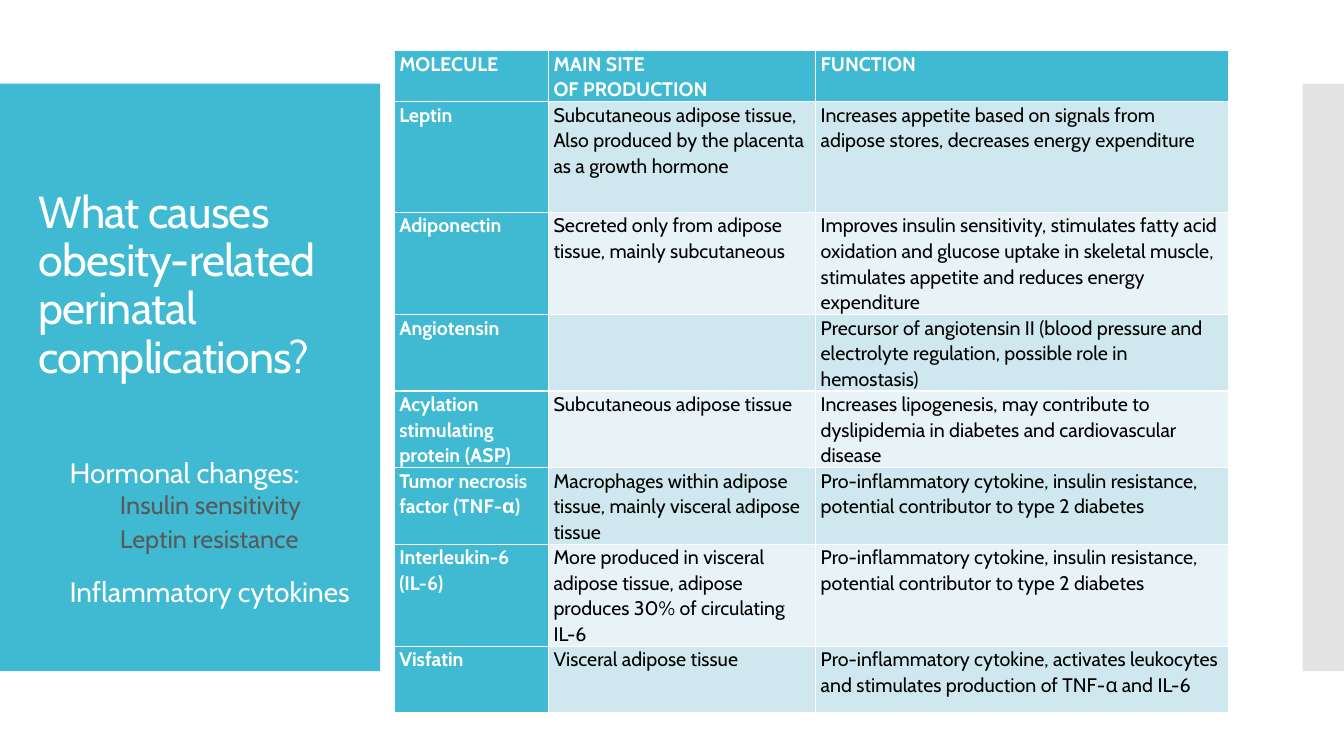
"""Builds the slide on the causes of obesity-related perinatal complications."""
from lxml import etree
from pptx import Presentation
from pptx import util as u
from pptx.dml.color import RGBColor
from pptx.enum import shapes, text
from pptx.oxml.ns import qn

FONT = "Cabin"
HUE = {"teal": "40BAD2", "grey": "C8C8C8", "white": "FFFFFF", "black": "000000",
       "slate": "595959", "odd": "CFE7EE", "even": "E8F3F7"}
TITLE = "What causes obesity-related perinatal complications?"
POINTS = [(0, "Hormonal changes:"), (1, "Insulin sensitivity"),
          (1, "Leptin resistance"), (0, "Inflammatory cytokines")]
LEVELS = [{"size": 20, "hue": "white", "left": 0.31, "line": 1.0, "before": 12, "after": 0},
          {"size": 18, "hue": "slate", "left": 0.81, "line": 0.9, "before": 2.5, "after": 2.5}]
CYTOKINE = ("Pro-inflammatory cytokine, insulin resistance, "
            "potential contributor to type 2 diabetes")
ROWS = [
    ("MOLECULE", "MAIN SITE\nOF PRODUCTION", "FUNCTION"),
    ("Leptin",
     "Subcutaneous adipose tissue,\nAlso produced by the placenta as a growth hormone",
     "Increases appetite based on signals from adipose stores, decreases energy expenditure"),
    ("Adiponectin",
     "Secreted only from adipose tissue, mainly subcutaneous",
     "Improves insulin sensitivity, stimulates fatty acid oxidation and glucose uptake in "
     "skeletal muscle, stimulates appetite and reduces energy expenditure"),
    ("Angiotensin", "",
     "Precursor of angiotensin II (blood pressure and electrolyte regulation, "
     "possible role in hemostasis)"),
    ("Acylation stimulating protein (ASP)",
     "Subcutaneous adipose tissue",
     "Increases lipogenesis, may contribute to dyslipidemia in diabetes and "
     "cardiovascular disease"),
    ("Tumor necrosis factor (TNF-α)",
     "Macrophages within adipose tissue, mainly visceral adipose tissue", CYTOKINE),
    ("Interleukin-6\n(IL-6)",
     "More produced in visceral adipose tissue, adipose produces 30% of circulating IL-6",
     CYTOKINE),
    ("Visfatin", "Visceral adipose tissue",
     "Pro-inflammatory cytokine, activates leukocytes and stimulates production of "
     "TNF-α and IL-6"),
]
WIDTHS = [1.53, 2.65, 4.1]
HEIGHTS = [0.49, 1.1, 0.95, 0.71, 0.73, 0.71, 0.95, 0.66]


def color(name):
    return RGBColor.from_string(HUE[name])


def style(para, size, hue, bold=False):
    for run in para.runs:
        run.font.name = FONT
        run.font.size = u.Pt(size)
        run.font.bold = bold
        run.font.color.rgb = color(hue)


def place(shape, *box):
    shape.left, shape.top, shape.width, shape.height = map(u.Inches, box)


def panel(slide, hue, *box):
    rect = slide.shapes.add_shape(shapes.MSO_SHAPE.RECTANGLE, *map(u.Inches, box))
    rect.shadow.inherit = False
    rect.fill.solid()
    rect.fill.fore_color.rgb = color(hue)
    rect.line.fill.background()
    slide.shapes._spTree.insert(2, rect._element)
    return rect


def heading(slide):
    title = slide.shapes.title
    place(title, 0.28, 1.25, 3.1, 2.6)
    frame = title.text_frame
    frame.text = TITLE
    frame.auto_size = text.MSO_AUTO_SIZE.NONE
    frame.vertical_anchor = text.MSO_ANCHOR.BOTTOM
    para = frame.paragraphs[0]
    para.alignment = text.PP_ALIGN.LEFT
    para.line_spacing = 0.9
    style(para, 32, "white")
    para.runs[0].font._element.set("spc", "-60")


def bullet(para, left):
    props = para._p.get_or_add_pPr()
    props.set("marL", str(u.Inches(left)))
    props.set("indent", str(u.Inches(-0.31)))
    tint = etree.SubElement(props, qn("a:buClr"))
    etree.SubElement(tint, qn("a:srgbClr"), val=HUE["teal"])
    etree.SubElement(props, qn("a:buChar"), char="•")


def points(slide):
    body = slide.placeholders[1]
    place(body, 0.28, 4.47, 3.3, 1.89)
    frame = body.text_frame
    frame.text = "\n".join(line for _, line in POINTS)
    frame.auto_size = text.MSO_AUTO_SIZE.NONE
    frame.vertical_anchor = text.MSO_ANCHOR.TOP
    for para, (level, _) in zip(frame.paragraphs, POINTS):
        look = LEVELS[level]
        para.level = level
        para.line_spacing = look["line"]
        para.space_before = u.Pt(look["before"])
        para.space_after = u.Pt(look["after"])
        bullet(para, look["left"])
        style(para, look["size"], look["hue"])


def grid(slide):
    box = map(u.Inches, (3.91, 0.5, sum(WIDTHS), sum(HEIGHTS)))
    table = slide.shapes.add_table(len(ROWS), len(WIDTHS), *box).table
    table.first_col = True
    for col, width in zip(table.columns, WIDTHS):
        col.width = u.Inches(width)
    for row, height in zip(table.rows, HEIGHTS):
        row.height = u.Inches(height)
    for r, row in enumerate(ROWS):
        for c, words in enumerate(row):
            cell = table.cell(r, c)
            head = r == 0 or c == 0
            cell.fill.solid()
            cell.fill.fore_color.rgb = color("teal" if head else "odd" if r % 2 else "even")
            cell.margin_left = cell.margin_right = u.Inches(0.05)
            cell.margin_top = cell.margin_bottom = 0
            cell.text_frame.text = words
            for para in cell.text_frame.paragraphs:
                para.line_spacing = 1.07
                style(para, 14, "white" if head else "black", head)


def main():
    deck = Presentation()
    deck.slide_width, deck.slide_height = u.Inches(13.33), u.Inches(7.5)
    slide = deck.slides.add_slide(deck.slide_layouts[1])
    panel(slide, "teal", 0, 0.83, 3.77, 5.83)
    strip = panel(slide, "grey", 12.92, 0.83, 0.41, 5.83)
    shade = strip._element.spPr.find(qn("a:solidFill"))[0]
    etree.SubElement(shade, qn("a:alpha"), val="50000")
    heading(slide)
    grid(slide)
    points(slide)
    deck.save("out.pptx")


if __name__ == "__main__":
    main()
